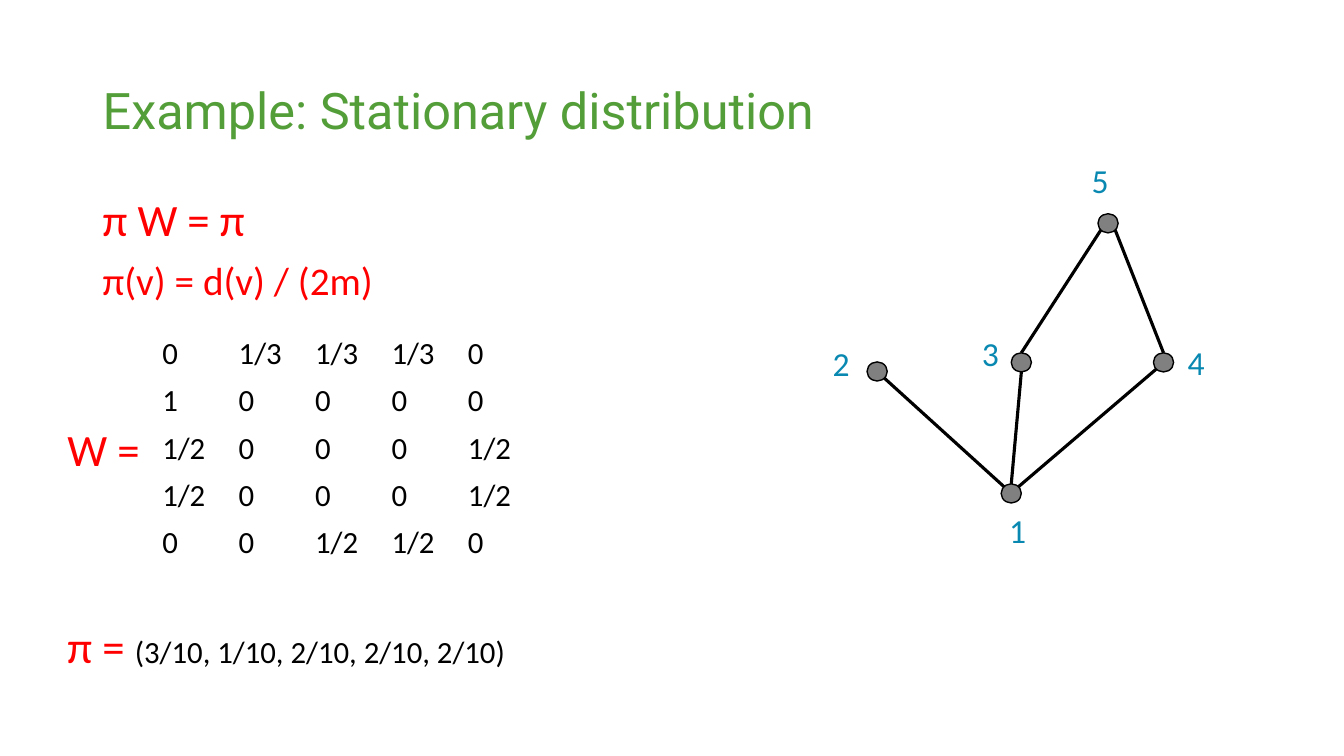
import pptx
import pptx.dml.color
import pptx.enum.shapes
import pptx.enum.text
import pptx.oxml.ns
import pptx.util
from dataclasses import dataclass

Inches = pptx.util.Inches


@dataclass(frozen=True)
class Theme:
    """Colours, fonts and type sizes of the slide."""
    heading: str = "549E39"
    formula: str = "FF0000"
    label: str = "0989B1"
    ink: str = "000000"
    vertex: str = "808080"
    heading_font: str = "Roboto"
    body_font: str = "Calibri"
    heading_size: int = 36
    formula_size: int = 32
    detail_size: int = 28
    label_size: int = 24
    value_size: int = 22


def rgb(value):
    """Turn a hex string into a colour."""
    return pptx.dml.color.RGBColor.from_string(value)


def add_text(paragraph, text, *, size, color, font):
    """Append formatted text to a paragraph."""
    run = paragraph.add_run()
    run.text = text
    run.font.size = pptx.util.Pt(size)
    run.font.name = font
    run.font.color.rgb = rgb(color)


class SlideBuilder:
    """Draw each kind of element on one slide in one style."""

    def __init__(self, slide, theme):
        """Keep the slide and its theme."""
        self.slide, self.theme = slide, theme

    def heading(self, text, left, top, width, height):
        """Add the slide heading, centred vertically in its box."""
        box = self.slide.shapes.add_textbox(*map(Inches, (left, top, width, height)))
        frame = box.text_frame
        frame.word_wrap = True
        frame.vertical_anchor = pptx.enum.text.MSO_ANCHOR.MIDDLE
        frame.paragraphs[0].line_spacing = 0.9
        add_text(frame.paragraphs[0], text, size=self.theme.heading_size,
                 color=self.theme.heading, font=self.theme.heading_font)

    def line_of_text(self, parts, left, top, width, height):
        """Add one unwrapped line made of (text, size, colour) parts."""
        box = self.slide.shapes.add_textbox(*map(Inches, (left, top, width, height)))
        frame = box.text_frame
        frame.word_wrap = False
        frame.auto_size = pptx.enum.text.MSO_AUTO_SIZE.SHAPE_TO_FIT_TEXT
        for text, size, color in parts:
            add_text(frame.paragraphs[0], text, size=size, color=color,
                     font=self.theme.body_font)

    def edge(self, start, end):
        """Add a graph edge between two points."""
        edge = self.slide.shapes.add_connector(
            pptx.enum.shapes.MSO_CONNECTOR.STRAIGHT, *map(Inches, start + end))
        edge.line.color.rgb = rgb(self.theme.ink)
        edge.line.width = pptx.util.Pt(2.25)
        properties = edge._element.spPr
        properties.append(properties.makeelement(pptx.oxml.ns.qn("a:effectLst"), {}))

    def vertex(self, left, top):
        """Add a graph vertex."""
        vertex = self.slide.shapes.add_shape(
            pptx.enum.shapes.MSO_SHAPE.OVAL, *map(Inches, (left, top, 0.2, 0.19)))
        vertex.shadow.inherit = False
        vertex.fill.solid()
        vertex.fill.fore_color.rgb = rgb(self.theme.vertex)
        vertex.line.color.rgb = rgb(self.theme.ink)
        vertex.line.width = pptx.util.Pt(1)

    def matrix(self, rows, left, top, width, height):
        """Add a plain table of matrix entries."""
        table = self.slide.shapes.add_table(
            len(rows), len(rows[0]), *map(Inches, (left, top, width, height))).table
        table.first_row = table.horz_banding = False
        for row_index, row in enumerate(rows):
            for column_index, entry in enumerate(row):
                cell = table.cell(row_index, column_index)
                cell.fill.background()
                add_text(cell.text_frame.paragraphs[0], entry, size=self.theme.value_size,
                         color=self.theme.ink, font=self.theme.body_font)


VERTICES = {
    "1": ((9.93, 4.8), (9.91, 5.01)),
    "2": ((8.6, 3.59), (8.16, 3.35)),
    "3": ((10.03, 3.5), (9.64, 3.25)),
    "4": ((11.44, 3.5), (11.68, 3.34)),
    "5": ((10.89, 2.12), (10.73, 1.54)),
}
EDGES = [
    ((9.96, 4.83), (8.77, 3.75)),
    ((10.03, 4.8), (10.13, 3.69)),
    ((10.1, 4.83), (11.47, 3.66)),
    ((11.54, 3.5), (11.06, 2.28)),
    ((10.13, 3.5), (10.92, 2.28)),
]
TRANSITIONS = [
    ["0", "1/3", "1/3", "1/3", "0"],
    ["1", "0", "0", "0", "0"],
    ["1/2", "0", "0", "0", "1/2"],
    ["1/2", "0", "0", "0", "1/2"],
    ["0", "0", "1/2", "1/2", "0"],
]


def main():
    """Build and save the slide."""
    deck = pptx.Presentation()
    deck.slide_width, deck.slide_height = Inches(13.33), Inches(7.5)
    theme = Theme()
    builder = SlideBuilder(deck.slides.add_slide(deck.slide_layouts[6]), theme)

    builder.heading("Example: Stationary distribution", 0.92, 0.4, 11.5, 1.45)
    formula = (theme.formula_size, theme.formula)
    builder.line_of_text([("π W = π", *formula)], 0.92, 1.85, 1.73, 0.64)
    builder.line_of_text([("π(v) = d(v) / (2m)", theme.detail_size, theme.formula)],
                         0.92, 2.49, 2.92, 0.57)

    for start, end in EDGES:
        builder.edge(start, end)
    for number, (vertex_corner, label_corner) in VERTICES.items():
        builder.vertex(*vertex_corner)
        builder.line_of_text([(number, theme.label_size, theme.label)],
                             *label_corner, 0.37, 0.5)

    builder.matrix(TRANSITIONS, 1.51, 3.28, 3.79, 2.33)
    builder.line_of_text([("W =", *formula)], 0.57, 4.13, 1.03, 0.64)
    builder.line_of_text([("π = ", *formula),
                          ("(3/10, 1/10, 2/10, 2/10, 2/10)", theme.value_size, theme.ink)],
                         0.57, 6.09, 4.59, 0.64)
    deck.save("out.pptx")


if __name__ == "__main__":
    main()
